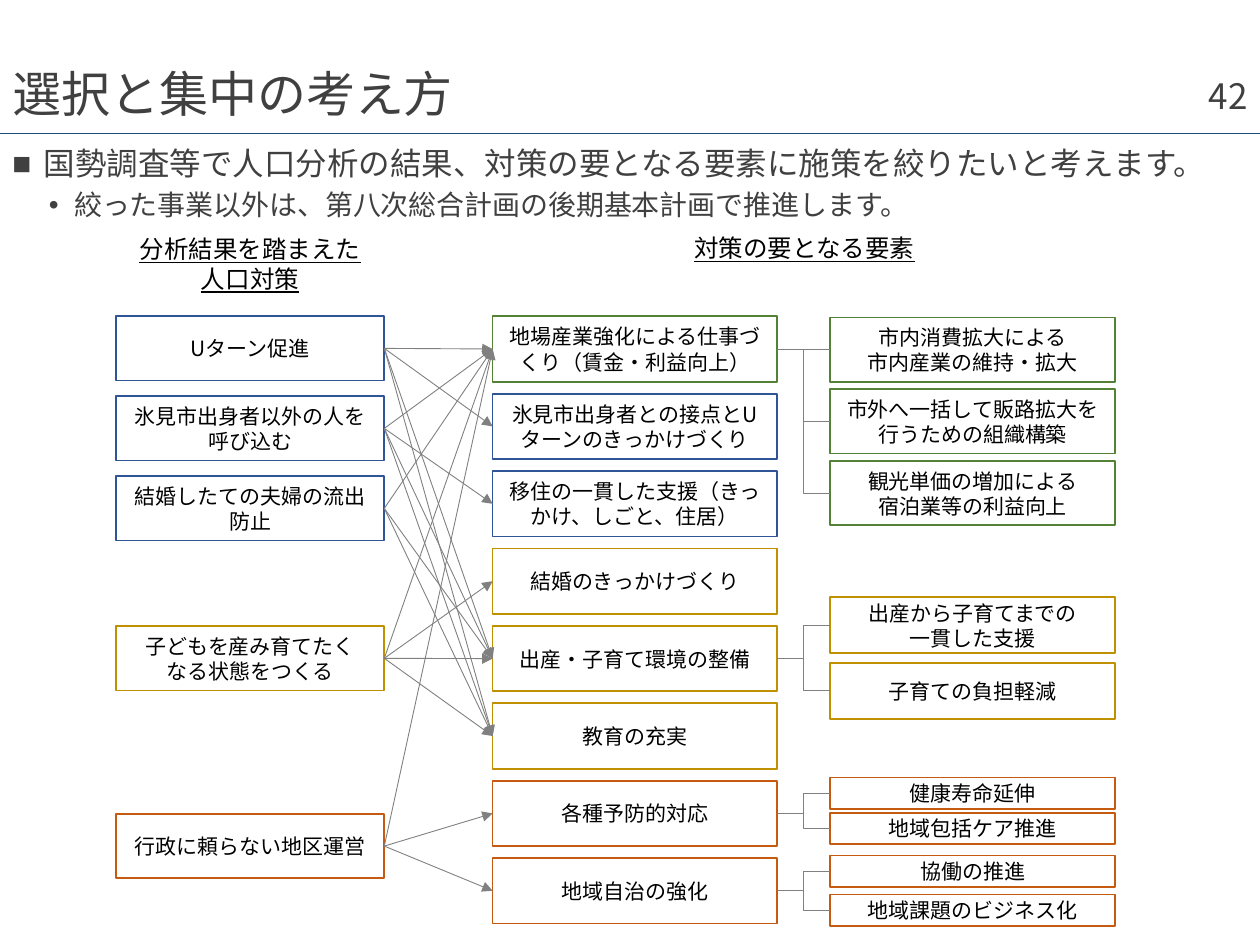
import pptx
import pptx.util
import pptx.dml.color
import pptx.enum.shapes
import pptx.enum.text
import pptx.oxml.ns
import lxml.etree

RGBColor = pptx.dml.color.RGBColor
ALIGN = pptx.enum.text.PP_ALIGN
ANCHOR = pptx.enum.text.MSO_ANCHOR
CONNECTOR = pptx.enum.shapes.MSO_CONNECTOR
qn = pptx.oxml.ns.qn

BLACK = RGBColor(0x00, 0x00, 0x00)
WHITE = RGBColor(0xFF, 0xFF, 0xFF)
DARK = RGBColor(0x40, 0x40, 0x40)
GRAY = RGBColor(0x80, 0x80, 0x80)
NAVY = RGBColor(0x1F, 0x4E, 0x79)
BLUE = RGBColor(0x2F, 0x55, 0x97)
GREEN = RGBColor(0x54, 0x82, 0x35)
GOLD = RGBColor(0xBF, 0x90, 0x00)
ORANGE = RGBColor(0xC5, 0x5A, 0x11)
FONT = "Noto Sans CJK JP"

WIDTH, HEIGHT = pptx.util.Inches(10), pptx.util.Inches(7.5)
COLUMNS, ROWS = 100, 75
LEFT_SITE, RIGHT_SITE = 1, 3

MEASURES = [
    (0, 6.35, BLUE, ["Uターン促進", "氷見市出身者以外の人を呼び込む",
                     "結婚したての夫婦の流出防止"]),
    (24.6, 0, GOLD, ["子どもを産み育てたく\nなる状態をつくる"]),
    (39.5, 0, ORANGE, ["行政に頼らない地区運営"]),
]
FACTORS = [
    (GREEN, "地場産業強化による仕事づくり（賃金・利益向上）"),
    (BLUE, "氷見市出身者との接点とUターンのきっかけづくり"),
    (BLUE, "移住の一貫した支援（きっかけ、しごと、住居）"),
    (GOLD, "結婚のきっかけづくり"),
    (GOLD, "出産・子育て環境の整備"),
    (GOLD, "教育の充実"),
    (ORANGE, "各種予防的対応"),
    (ORANGE, "地域自治の強化"),
]
FACTORS_OF_MEASURE = [(0, 1, 4, 5), (0, 2, 4, 5), (0, 4, 5), (0, 3, 4, 5), (0, 6, 7)]
ACTIONS = [
    (0, 0.1, 5.7, 5.1, GREEN, ["市内消費拡大による\n市内産業の維持・拡大",
                               "市外へ一括して販路拡大を行うための組織構築",
                               "観光単価の増加による\n宿泊業等の利益向上"]),
    (4, 22.3, 5.2, 4.45, GOLD, ["出産から子育てまでの\n一貫した支援", "子育ての負担軽減"]),
    (6, 36.6, 2.8, 2.5, ORANGE, ["健康寿命延伸", "地域包括ケア推進"]),
    (7, 42.8, 3.1, 2.5, ORANGE, ["協働の推進", "地域課題のビジネス化"]),
]


def place(column, row, columns, rows):
    return (round(WIDTH * column / COLUMNS), round(HEIGHT * row / ROWS),
            round(WIDTH * columns / COLUMNS), round(HEIGHT * rows / ROWS))


def write(frame, text, size=12, color=BLACK, align=ALIGN.CENTER, anchor=ANCHOR.MIDDLE,
          underline=None, wrap=True, spacing=None):
    frame.word_wrap = wrap
    frame.auto_size = pptx.enum.text.MSO_AUTO_SIZE.NONE
    frame.vertical_anchor = anchor
    frame.margin_left = frame.margin_right = pptx.util.Inches(0.1)
    frame.margin_top = frame.margin_bottom = pptx.util.Inches(0.05)
    frame.text = text
    for paragraph in frame.paragraphs:
        paragraph.alignment = align
        paragraph.line_spacing = spacing
        for run in paragraph.runs:
            run.font.size = pptx.util.Pt(size)
            run.font.name = FONT
            run.font.color.rgb = color
            run.font.underline = underline
            east_asian = lxml.etree.Element(qn("a:ea"), typeface=FONT)
            run.font._rPr.find(qn("a:latin")).addnext(east_asian)


def label(slide, box, text, **style):
    area = slide.shapes.add_textbox(*place(*box))
    write(area.text_frame, text, **style)
    return area.text_frame


def bullet(paragraph, mark, size, indent, hanging, before):
    paragraph.space_before = pptx.util.Pt(before)
    properties = paragraph._p.get_or_add_pPr()
    properties.set("marL", str(pptx.util.Inches(indent)))
    properties.set("indent", str(-pptx.util.Inches(hanging)))
    lxml.etree.SubElement(properties, qn("a:buFont"), typeface="Arial")
    lxml.etree.SubElement(properties, qn("a:buChar"), char=mark)
    for run in paragraph.runs:
        run.font.size = pptx.util.Pt(size)


def draw_line(slide, kind, start, end, color=GRAY, arrow=False):
    line = slide.shapes.add_connector(kind, *start, *end)
    line.line.color.rgb = color
    line.line.width = pptx.util.Pt(0.5)
    if arrow:
        lxml.etree.SubElement(line.line._get_or_add_ln(), qn("a:tailEnd"), type="triangle")
    lxml.etree.SubElement(line._element.spPr, qn("a:effectLst"))
    return line


def link(slide, source, target, kind=CONNECTOR.STRAIGHT, arrow=False):
    line = draw_line(slide, kind, (0, 0), (0, 0), arrow=arrow)
    line.begin_connect(source, RIGHT_SITE)
    line.end_connect(target, LEFT_SITE)


def card(slide, box, text, color):
    shape = slide.shapes.add_shape(pptx.enum.shapes.MSO_SHAPE.RECTANGLE, *place(*box))
    shape.shadow.inherit = False
    shape.fill.solid()
    shape.fill.fore_color.rgb = WHITE
    shape.line.color.rgb = color
    shape.line.width = pptx.util.Pt(1)
    write(shape.text_frame, text)
    return shape


def stack(slide, box, pitch, rows, color, texts):
    left, top, width = box
    return [card(slide, (left, top + pitch * i, width, rows), text, color)
            for i, text in enumerate(texts)]


def header(slide, box):
    left, top, width, height = box
    title = slide.shapes.title
    title.left, title.top, title.width, title.height = place(left, top + 0.6, width, 2.9)
    write(title.text_frame, "選択と集中の考え方", size=28, color=DARK,
          align=ALIGN.LEFT, spacing=0.9)
    label(slide, (left + width - 22.5, top, 22.5, 4), "42", size=20, color=DARK,
          align=ALIGN.RIGHT)
    x, y, span, _ = place(left, top + height, width, 0)
    draw_line(slide, CONNECTOR.STRAIGHT, (x, y), (x + span, y), color=NAVY)


def summary(slide, box):
    frame = label(slide, box, "国勢調査等で人口分析の結果、対策の要となる要素に施策を絞りたいと考えます。\n"
                  "絞った事業以外は、第八次総合計画の後期基本計画で推進します。",
                  color=DARK, align=ALIGN.LEFT, anchor=ANCHOR.TOP, spacing=0.9)
    main, detail = frame.paragraphs
    bullet(main, "■", size=18, indent=0.25, hanging=0.25, before=10)
    bullet(detail, "•", size=16, indent=0.49, hanging=0.2, before=5)


def measure_column(slide, box):
    left, top, width, _ = box
    label(slide, (left + 0.8, top - 7, 19.7, 5.7), "分析結果を踏まえた\n人口対策",
          size=14, underline=True, wrap=False, anchor=ANCHOR.TOP)
    return [measure for offset, pitch, color, texts in MEASURES
            for measure in stack(slide, (left, top + offset, width), pitch, 5.1, color, texts)]


def factor_column(slide, box):
    left, top, width, height = box
    rows = 5.2
    pitch = (height - rows) / (len(FACTORS) - 1)
    label(slide, (left + 14.9, top - 7.1, 19.7, 3.4), "対策の要となる要素",
          size=14, underline=True, wrap=False, anchor=ANCHOR.TOP)
    return [card(slide, (left, top + pitch * i, width, rows), text, color)
            for i, (color, text) in enumerate(FACTORS)]


def action_column(slide, box, factors):
    left, top, width, _ = box
    for factor, offset, pitch, rows, color, texts in ACTIONS:
        for action in stack(slide, (left, top + offset, width), pitch, rows, color, texts):
            link(slide, factors[factor], action, kind=CONNECTOR.ELBOW)


def main():
    deck = pptx.Presentation()
    deck.slide_width, deck.slide_height = WIDTH, HEIGHT
    slide = deck.slides.add_slide(deck.slide_layouts.get_by_name("Title Only"))
    header(slide, (0, 5.6, COLUMNS, 5))
    summary(slide, (0, 11.3, COLUMNS, 7.1))
    measures = measure_column(slide, (9.2, 25.1, 21.3, 48.2))
    factors = factor_column(slide, (39.1, 25.1, 22.6, 48.2))
    action_column(slide, (65.9, 25.1, 22.6, 48.2), factors)
    for measure, targets in zip(measures, FACTORS_OF_MEASURE):
        for target in targets:
            link(slide, measure, factors[target], arrow=True)
    deck.save("out.pptx")


if __name__ == "__main__":
    main()
